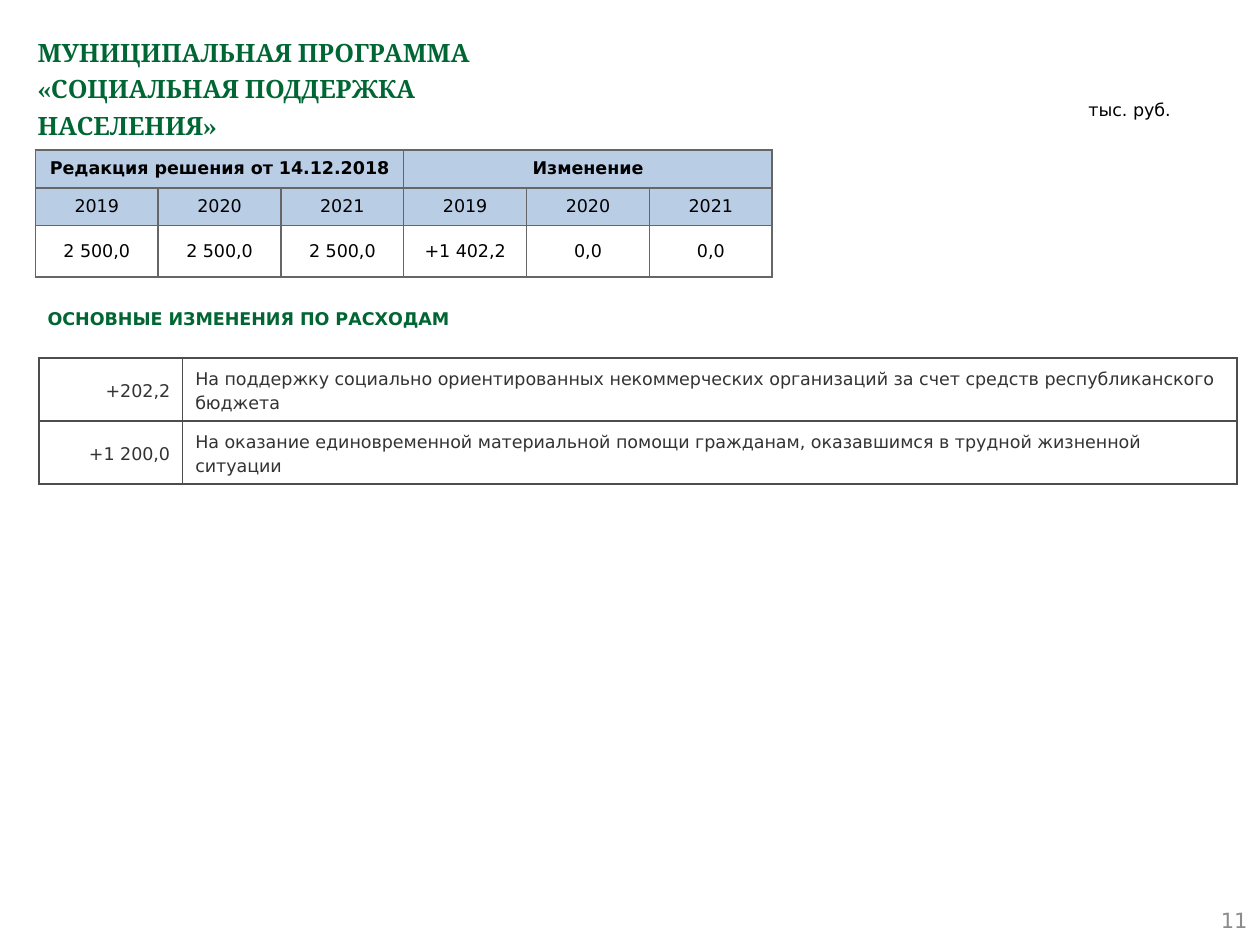
from lxml.etree import SubElement
from pptx import Presentation
from pptx.dml.color import RGBColor
from pptx.enum.shapes import MSO_SHAPE
from pptx.enum.text import MSO_ANCHOR, PP_ALIGN
from pptx.oxml.ns import qn
from pptx.util import Inches, Pt

GREEN = RGBColor(0x00, 0x66, 0x33)
BLACK = RGBColor(0x00, 0x00, 0x00)
DARK = RGBColor(0x33, 0x33, 0x33)
GREY = RGBColor(0x8C, 0x8C, 0x8C)
BLUE = RGBColor(0xB9, 0xCD, 0xE5)
SUMMARY_BORDER = RGBColor(0x66, 0x66, 0x66)
CHANGES_BORDER = RGBColor(0x4D, 0x4D, 0x4D)


def write(frame, text, color, size=10, bold=False, align=PP_ALIGN.LEFT,
          spacing=1.0, font="DejaVu Sans"):
    frame.text = text
    frame.word_wrap = True
    for para in frame.paragraphs:
        para.alignment = align
        para.line_spacing = spacing
        for span in para.runs:
            span.font.name = font
            span.font.size = Pt(size)
            span.font.bold = bold
            span.font.color.rgb = color


def style_cell(cell, border, fill=None):
    cell.vertical_anchor = MSO_ANCHOR.MIDDLE
    properties = cell._tc.get_or_add_tcPr()
    for side in ("a:lnL", "a:lnR", "a:lnT", "a:lnB"):
        line = SubElement(properties, qn(side), w=str(Pt(1)))
        solid = SubElement(line, qn("a:solidFill"))
        SubElement(solid, qn("a:srgbClr"), val=str(border))
    if fill is None:
        cell.fill.background()
    else:
        cell.fill.solid()
        cell.fill.fore_color.rgb = fill


deck = Presentation()
deck.slide_width = Inches(10)
deck.slide_height = Inches(7.5)
page = deck.slides.add_slide(deck.slide_layouts[6])

title = page.shapes.add_textbox(Inches(0.2), Inches(0.2), Inches(9.61), Inches(0.79))
write(title.text_frame,
      "МУНИЦИПАЛЬНАЯ ПРОГРАММА\v«СОЦИАЛЬНАЯ ПОДДЕРЖКА\vНАСЕЛЕНИЯ»",
      GREEN, 14.4, True, spacing=1.2, font="Cambria")

number = page.shapes.add_textbox(Inches(7.67), Inches(7.1), Inches(2.33), Inches(0.4))
number.text_frame.vertical_anchor = MSO_ANCHOR.MIDDLE
write(number.text_frame, "11", GREY, 12, align=PP_ALIGN.RIGHT)

heading = page.shapes.add_shape(
    MSO_SHAPE.PENTAGON, Inches(0.28), Inches(2.31), Inches(4.43), Inches(0.43))
heading.adjustments[0] = 0
heading.shadow.inherit = False
heading.fill.background()
heading.line.fill.background()
heading.text_frame.vertical_anchor = MSO_ANCHOR.MIDDLE
write(heading.text_frame, "ОСНОВНЫЕ ИЗМЕНЕНИЯ ПО РАСХОДАМ", GREEN, bold=True)

unit = page.shapes.add_textbox(Inches(8.54), Inches(0.7), Inches(1.01), Inches(0.3))
write(unit.text_frame, "тыс. руб.", BLACK, spacing=1.2)

changes_rows = [
    ("+202,2", "На поддержку социально ориентированных некоммерческих организаций "
               "за счет средств республиканского бюджета"),
    ("+1 200,0", "На оказание единовременной материальной помощи гражданам, "
                 "оказавшимся в трудной жизненной ситуации"),
]
changes = page.shapes.add_table(
    2, 2, Inches(0.31), Inches(2.84), Inches(9.51), Inches(0.98)).table
changes.first_row = changes.horz_banding = False
for column, width in zip(changes.columns, (1.14, 8.37)):
    column.width = Inches(width)
for row, texts in zip(changes.rows, changes_rows):
    row.height = Inches(0.49)
    for cell, text, align in zip(row.cells, texts, (PP_ALIGN.RIGHT, PP_ALIGN.LEFT)):
        style_cell(cell, CHANGES_BORDER)
        write(cell.text_frame, text, DARK, align=align, spacing=1.2)

summary_rows = [
    ("Редакция решения от 14.12.2018", "", "", "Изменение", "", ""),
    ("2019", "2020", "2021") * 2,
    ("2 500,0",) * 3 + ("+1 402,2", "0,0", "0,0"),
]
summary = page.shapes.add_table(
    3, 6, Inches(0.28), Inches(1.19), Inches(5.85), Inches(1)).table
summary.first_row = summary.horz_banding = False
for column in summary.columns:
    column.width = Inches(5.85 / 6)
for index, (row, height) in enumerate(zip(summary.rows, (0.3, 0.3, 0.41))):
    row.height = Inches(height)
    for cell, text in zip(row.cells, summary_rows[index]):
        style_cell(cell, SUMMARY_BORDER, BLUE if index < 2 else None)
        cell.margin_left = cell.margin_right = Inches(0.05)
        cell.margin_top = cell.margin_bottom = Inches(0.05)
        write(cell.text_frame, text, BLACK, bold=index == 0, align=PP_ALIGN.CENTER)
for first in (0, 3):
    summary.cell(0, first).merge(summary.cell(0, first + 2))

deck.save("out.pptx")
